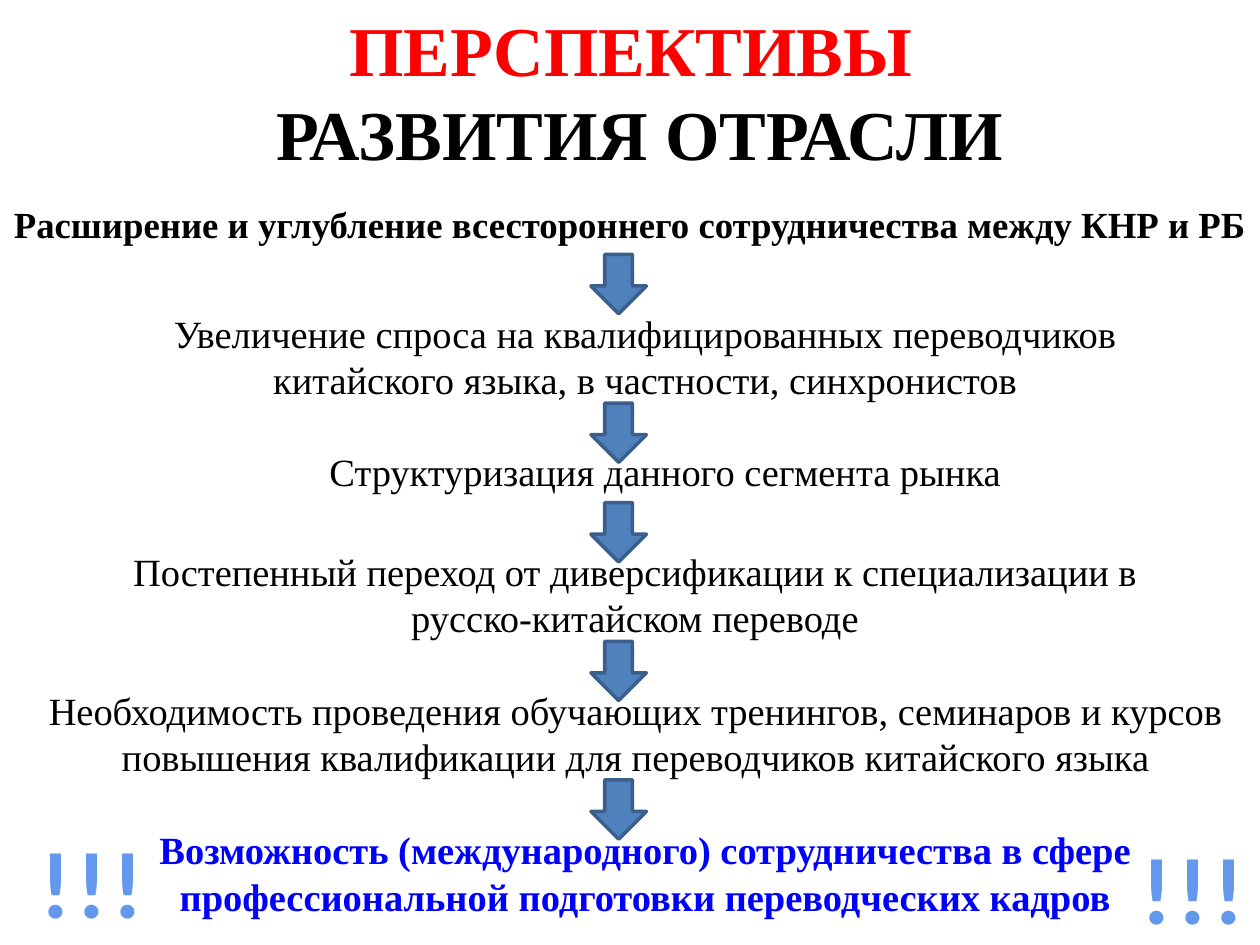
from dataclasses import dataclass

from lxml import etree
from pptx import Presentation
from pptx.dml.color import RGBColor
from pptx.enum.shapes import MSO_SHAPE
from pptx.enum.text import MSO_ANCHOR, MSO_AUTO_SIZE, PP_ALIGN
from pptx.oxml.ns import qn
from pptx.util import Inches, Pt

DOWN_ARROW = MSO_SHAPE.DOWN_ARROW
CENTER = PP_ALIGN.CENTER
TOP = MSO_ANCHOR.TOP
FIT_SHAPE = MSO_AUTO_SIZE.SHAPE_TO_FIT_TEXT


@dataclass(frozen=True)
class Theme:
    """Colours, fonts and type sizes of the slide."""
    font: str = "Times New Roman"
    mark_font: str = "Calibri"
    black: str = "000000"
    red: str = "FF0000"
    blue: str = "0000FF"
    arrow_fill: str = "4F81BD"
    arrow_line: str = "3A5F8C"
    mark_top: str = "6398ED"
    mark_bottom: str = "265EA0"
    mark_outline: str = "F4F6F9"
    title_size: int = 40
    lead_size: int = 21
    step_size: int = 22
    mark_size: int = 54


class SlideBuilder:
    """Adds styled elements to the current slide."""

    def __init__(self, slide, theme):
        self.slide = slide
        self.theme = theme

    def place(self, sp, box):
        """Move a shape to a box given in inches."""
        for name, value in zip(("left", "top", "width", "height"), box):
            setattr(sp, name, Inches(value))

    def frame(self, tf, wrap=True):
        """Apply the common text frame settings."""
        values = {"word_wrap": wrap, "auto_size": FIT_SHAPE, "vertical_anchor": TOP}
        for name, value in values.items():
            setattr(tf, name, value)

    def run(self, p, text, size, color=None, bold=False, font=None):
        """Add one formatted run to a centred paragraph."""
        p.alignment = CENTER
        r = p.add_run()
        r.text = text
        values = {"name": font or self.theme.font, "size": Pt(size), "bold": bold}
        for name, value in values.items():
            setattr(r.font, name, value)
        if color:
            r.font.color.rgb = RGBColor.from_string(color)
        return r

    def title(self, lines, box):
        """Fill the title placeholder with coloured lines."""
        sp = self.slide.shapes.title
        self.place(sp, box)
        tf = sp.text_frame
        self.frame(tf)
        for i, (text, color) in enumerate(lines):
            p = tf.add_paragraph() if i else tf.paragraphs[0]
            self.run(p, text, self.theme.title_size, color, True)

    def text(self, text, box, size, color, bold=False):
        """Add a wrapped text box."""
        sp = self.slide.shapes.add_textbox(*map(Inches, box))
        self.frame(sp.text_frame)
        self.run(sp.text_frame.paragraphs[0], text, size, color, bold)

    def arrow(self, top):
        """Add a down arrow on the common axis."""
        sp = self.slide.shapes.add_shape(
            DOWN_ARROW, Inches(4.69), Inches(top), Inches(0.44), Inches(0.47))
        sp.shadow.inherit = False
        sp.fill.solid()
        sp.fill.fore_color.rgb = RGBColor.from_string(self.theme.arrow_fill)
        sp.line.color.rgb = RGBColor.from_string(self.theme.arrow_line)
        sp.line.width = Pt(2)

    def marks(self, left, top):
        """Add outlined exclamation marks with a gradient."""
        t = self.theme
        sp = self.slide.shapes.add_textbox(*map(Inches, (left, top, 1.06, 1.01)))
        self.frame(sp.text_frame, False)
        r = self.run(sp.text_frame.paragraphs[0], "!!!", t.mark_size,
                     bold=True, font=t.mark_font)
        fill = r.font.fill
        fill.gradient()
        fill.gradient_angle = 270
        stops = ((0.1, t.mark_top), (0.75, t.mark_bottom))
        for stop, (position, color) in zip(fill.gradient_stops, stops):
            stop.position = position
            stop.color.rgb = RGBColor.from_string(color)
        props = r.font._element
        props.set("spc", "300")
        ln = etree.Element(qn("a:ln"), w=str(Pt(0.9)))
        solid = etree.SubElement(ln, qn("a:solidFill"))
        etree.SubElement(solid, qn("a:srgbClr"), val=t.mark_outline)
        props.insert(0, ln)


def main():
    """Build and save the slide."""
    theme = Theme()
    prs = Presentation()
    prs.slide_width, prs.slide_height = Inches(10), Inches(7.5)
    s = SlideBuilder(prs.slides.add_slide(prs.slide_layouts[5]), theme)

    s.title([("ПЕРСПЕКТИВЫ", theme.red), (" РАЗВИТИЯ ОТРАСЛИ", theme.black)],
            (0.2, 0, 9.61, 1.45))
    s.text("Расширение и углубление всестороннего сотрудничества между КНР и РБ",
           (0, 1.55, 10, 0.45), theme.lead_size, theme.black, True)

    steps = [
        ("Увеличение спроса на квалифицированных переводчиков китайского языка, "
         "в частности, синхронистов", (0.75, 2.41, 8.74, 0.84)),
        ("Структуризация данного сегмента рынка", (0.91, 3.51, 8.74, 0.47)),
        ("Постепенный переход от диверсификации к специализации в "
         "русско-китайском переводе", (0.67, 4.3, 8.74, 0.84)),
        ("Необходимость проведения обучающих тренингов, семинаров и курсов "
         "повышения квалификации для переводчиков китайского языка",
         (0.28, 5.4, 9.53, 0.84)),
    ]
    for text, box in steps:
        s.text(text, box, theme.step_size, theme.black)
    s.text("Возможность (международного) сотрудничества в сфере "
           "профессиональной подготовки переводческих кадров",
           (0.75, 6.51, 8.74, 0.84), theme.step_size, theme.blue, True)

    for top in (2.02, 3.2, 3.99, 5.09, 6.19):
        s.arrow(top)
    for left, top in ((0.2, 6.49), (8.94, 6.54)):
        s.marks(left, top)

    prs.save("out.pptx")


if __name__ == "__main__":
    main()
